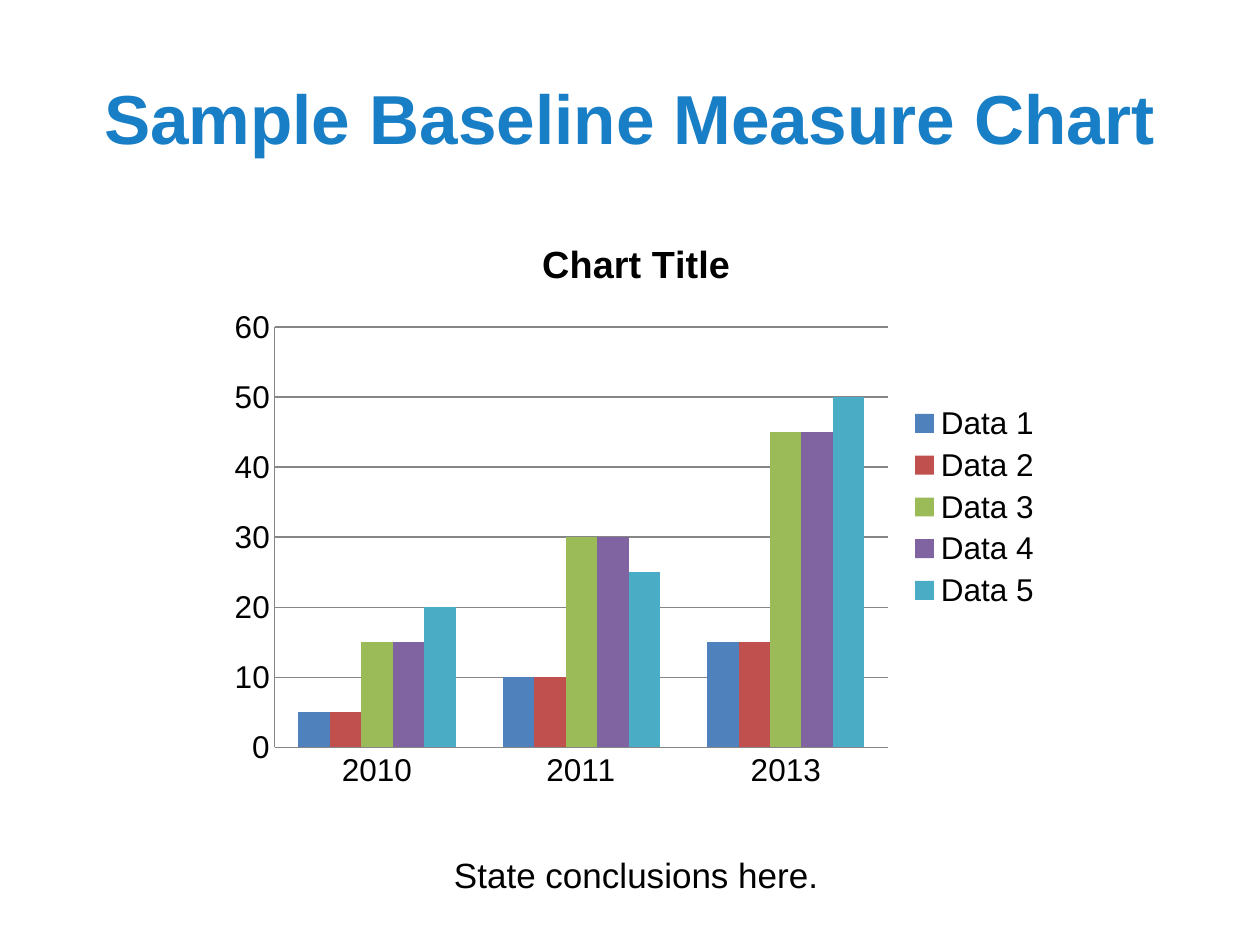
import pptx
import pptx.util
import pptx.dml.color
import pptx.chart.data
import pptx.enum.chart
import pptx.enum.text

Pt = pptx.util.Pt
kinds = pptx.enum.chart
deck = pptx.Presentation()
deck.slide_width = pptx.util.Inches(10)
deck.slide_height = pptx.util.Inches(7.5)
wide, high = deck.slide_width, deck.slide_height
slide = deck.slides.add_slide(deck.slide_layouts[6])


def style(font, size, color, bold=False):
    font.name = "Arial"
    font.size = Pt(size)
    font.bold = bold
    font.color.rgb = pptx.dml.color.RGBColor.from_string(color)


def area(left, top, width, height):
    return int(left * wide), int(top * high), int(width * wide), int(height * high)


labels = [
    ("Sample Baseline Measure Chart", area(0.05, 0.04, 0.9, 1 / 6), 39.6, "187EC5", True),
    ("State conclusions here.", area(0.35, 0.895, 0.31, 0.06), 20, "000000", False),
]
for words, place, size, color, bold in labels:
    box = slide.shapes.add_textbox(*place)
    frame = box.text_frame
    frame.word_wrap = bold
    frame.vertical_anchor = pptx.enum.text.MSO_ANCHOR.MIDDLE
    line = frame.paragraphs[0]
    line.text = words
    line.alignment = pptx.enum.text.PP_ALIGN.CENTER
    style(line.font, size, color, bold)

series = [
    ("Data 1", (5, 10, 15), "4F81BD"),
    ("Data 2", (5, 10, 15), "C0504D"),
    ("Data 3", (15, 30, 45), "9BBB59"),
    ("Data 4", (15, 30, 45), "8064A2"),
    ("Data 5", (20, 25, 50), "4BACC6"),
]
data = pptx.chart.data.CategoryChartData()
data.categories = ["2010", "2011", "2013"]
for name, values, color in series:
    data.add_series(name, values)

chart = slide.shapes.add_chart(
    kinds.XL_CHART_TYPE.COLUMN_CLUSTERED, *area(0.173, 0.227, 0.664, 0.619), data
).chart
style(chart.font, 18, "000000")
chart.has_title = True
title = chart.chart_title
title.include_in_layout = False
head = title.text_frame.paragraphs[0]
head.text = "Chart Title"
style(head.font, 21.6, "000000", True)

chart.has_legend = True
chart.legend.position = kinds.XL_LEGEND_POSITION.RIGHT
chart.legend.include_in_layout = False

plot = chart.plots[0]
plot.gap_width = 150
plot.overlap = 0
plot.vary_by_categories = False
for bars, (name, values, color) in zip(plot.series, series):
    bars.format.fill.solid()
    bars.format.fill.fore_color.rgb = pptx.dml.color.RGBColor.from_string(color)

scale = chart.value_axis
scale.minimum_scale = 0
scale.maximum_scale = 60
scale.major_unit = 10
scale.has_major_gridlines = True
for axis in (chart.category_axis, scale):
    axis.major_tick_mark = kinds.XL_TICK_MARK.NONE
    axis.minor_tick_mark = kinds.XL_TICK_MARK.NONE
for part in (chart.category_axis, scale, scale.major_gridlines):
    part.format.line.width = Pt(0.75)
    part.format.line.color.rgb = pptx.dml.color.RGBColor.from_string("868686")

deck.save("out.pptx")
